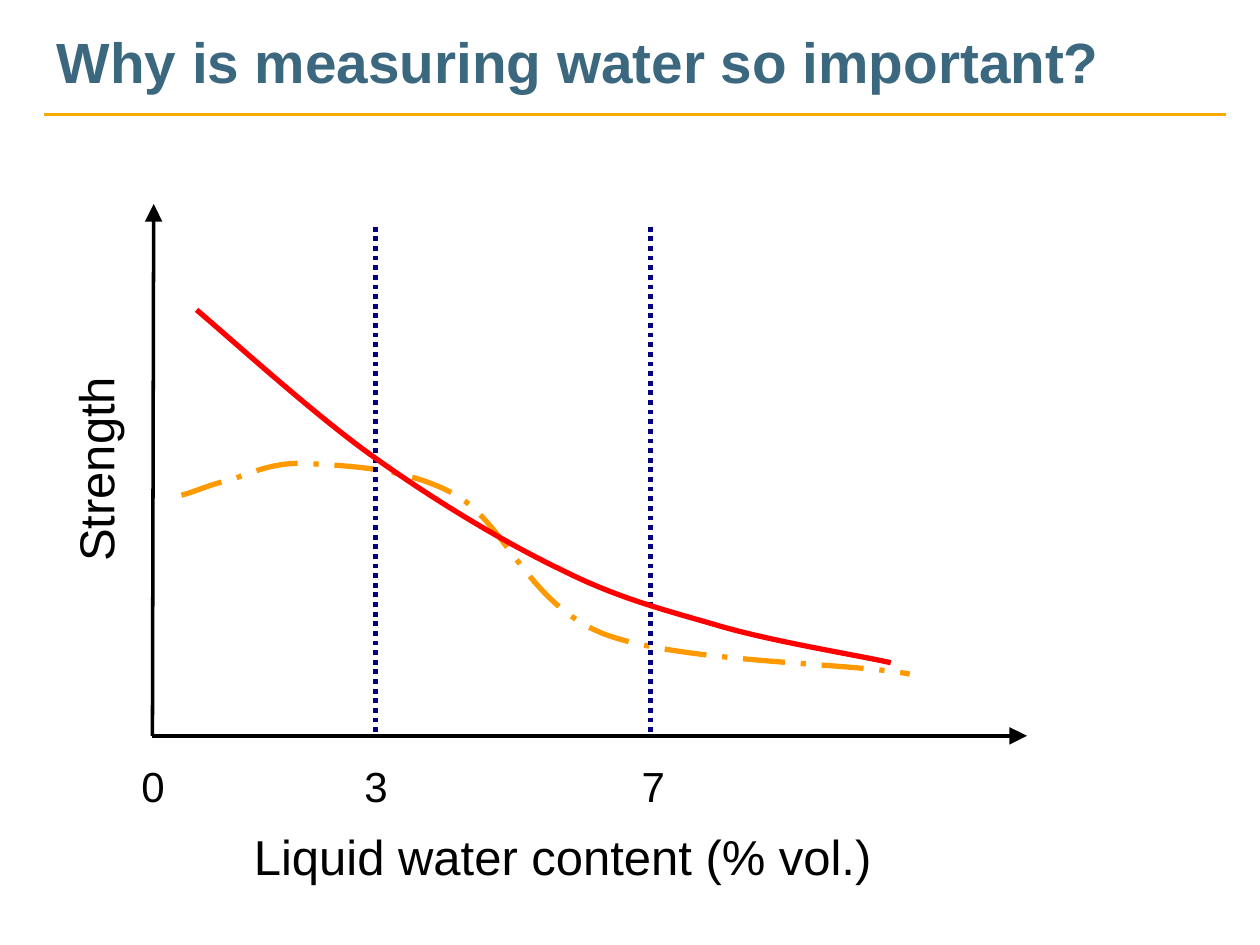
from itertools import chain

from pptx import Presentation, util as u
from pptx.dml.color import RGBColor
from pptx.enum import dml, shapes, text
from pptx.oxml.ns import qn
from lxml import etree

TITLE = RGBColor(0x3B, 0x68, 0x7F)
RULE = RGBColor(0xF9, 0xAA, 0x00)
BLACK = RGBColor(0, 0, 0)
NAVY = RGBColor(0, 0, 0x80)
ORANGE = RGBColor(0xFF, 0x99, 0)
RED = RGBColor(0xFF, 0, 0)
FONT = "Arial"

# Plot frame, in inches
ORIGIN_X, AXIS_Y = 1.21, 5.84
AXIS_TOP, AXIS_RIGHT = 1.62, 8.15
LIMIT_TOP = 1.8
LABEL_Y, LABEL_W, LABEL_H = 5.99, 0.93, 0.83
TICKS = {"0": 0.75, "3": 2.52, "7": 4.72}  # left edge of each label
LIMITS = (5.16, 2.98)

# Each curve: start point, then cubic segments (control, control, end)
WET_CURVE = ((1.44, 3.93), [
    ((1.53, 3.91), (1.65, 3.85), (1.82, 3.81)),
    ((1.99, 3.76), (2.16, 3.66), (2.46, 3.68)),
    ((2.76, 3.7), (3.23, 3.71), (3.62, 3.93)),
    ((4.01, 4.16), (4.19, 4.79), (4.79, 5.03)),
    ((5.39, 5.26), (6.76, 5.26), (7.22, 5.35)),
])
FALLING_CURVE = ((1.56, 2.46), [
    ((1.8, 2.66), (2.49, 3.29), (2.97, 3.63)),
    ((3.46, 3.98), (4.01, 4.31), (4.47, 4.53)),
    ((4.93, 4.76), (5.31, 4.85), (5.75, 4.98)),
    ((6.18, 5.1), (6.8, 5.2), (7.07, 5.26)),
])


def set_font(p, size, color, bold=False):
    p.font.name, p.font.size, p.font.bold = FONT, u.Pt(size), bold
    p.font.color.rgb = color


def set_line(line, color, width, dash=None):
    line.color.rgb, line.width = color, u.Pt(width)
    if dash:
        line.dash_style = dash


def add_title(s, caption):
    sp = s.shapes.title
    sp.left, sp.top, sp.width, sp.height = map(u.Inches, (0.35, 0.21, 9.37, 0.55))
    tf = sp.text_frame
    tf.text = caption
    tf.vertical_anchor = text.MSO_ANCHOR.MIDDLE
    p = tf.paragraphs[0]
    p.alignment = text.PP_ALIGN.LEFT
    set_font(p, 32.4, TITLE, bold=True)


def add_line(s, x1, y1, x2, y2, color, width, dash=None, arrow=False):
    sp = s.shapes.add_connector(shapes.MSO_CONNECTOR.STRAIGHT,
                                *map(u.Inches, (x1, y1, x2, y2)))
    set_line(sp.line, color, width, dash)
    if arrow:
        ln = sp._element.spPr.find(qn("a:ln"))
        etree.SubElement(ln, qn("a:tailEnd"), type="triangle", w="lg", len="lg")
    etree.SubElement(sp._element.spPr, qn("a:effectLst"))


def add_label(s, caption, x, y, w, h, size, rotation=0):
    sp = s.shapes.add_textbox(*map(u.Inches, (x, y, w, h)))
    sp.rotation = rotation
    tf = sp.text_frame
    tf.word_wrap = True
    tf.text = caption
    p = tf.paragraphs[0]
    p.alignment = text.PP_ALIGN.CENTER
    set_font(p, size, BLACK)


def add_curve(s, curve, color, dash=None):
    start, segments = curve
    to_emu = lambda point: tuple(map(u.Inches, point))
    builder = s.shapes.build_freeform(*to_emu(start))
    builder.add_line_segments(map(to_emu, chain.from_iterable(segments)), close=False)
    sp = builder.convert_to_shape()

    # Merge every three straight steps into one cubic segment
    steps = list(sp._element.iter(qn("a:lnTo")))
    for i in range(0, len(steps), 3):
        cubic = etree.Element(qn("a:cubicBezTo"))
        steps[i].addprevious(cubic)
        for step in steps[i:i + 3]:
            cubic.append(step[0])
            step.getparent().remove(step)

    sp.shadow.inherit = False
    sp.fill.background()
    set_line(sp.line, color, 3, dash)


def main():
    prs = Presentation()
    prs.slide_width, prs.slide_height = u.Inches(10), u.Inches(7.5)
    s = prs.slides.add_slide(prs.slide_layouts[5])

    # Heading and rule
    add_line(s, 0.35, 0.91, 9.73, 0.91, RULE, 2)
    add_title(s, "Why is measuring water so important?")

    # Axes and their captions
    add_label(s, "Strength", -0.92, 3.44, 3.35, 0.57, 28, rotation=270)
    add_line(s, ORIGIN_X, AXIS_Y, ORIGIN_X + 0.01, AXIS_TOP, BLACK, 2, arrow=True)
    add_line(s, ORIGIN_X, AXIS_Y, AXIS_RIGHT, AXIS_Y, BLACK, 2, arrow=True)
    for caption, x in TICKS.items():
        add_label(s, caption, x, LABEL_Y, LABEL_W, LABEL_H, 24)
    add_label(s, "Liquid water content (% vol.)", 1.85, 6.51, 5.23, 0.57, 28)

    # Curves and limits
    add_curve(s, WET_CURVE, ORANGE, dml.MSO_LINE.LONG_DASH_DOT)
    for x in LIMITS:
        add_line(s, x, LIMIT_TOP, x, AXIS_Y, NAVY, 2.75, dml.MSO_LINE.ROUND_DOT)
    add_curve(s, FALLING_CURVE, RED)

    prs.save("out.pptx")


if __name__ == "__main__":
    main()
